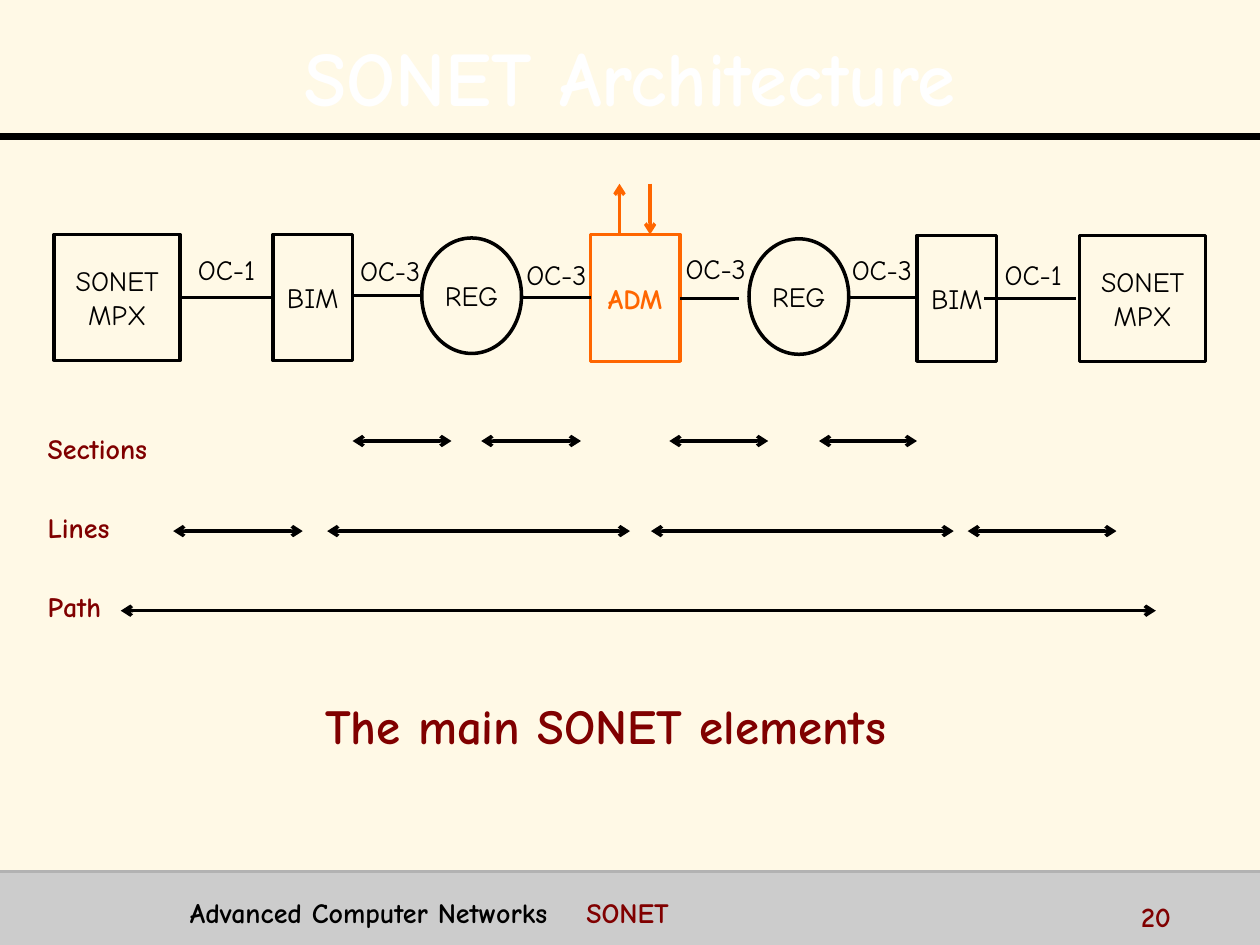
from lxml.etree import SubElement
from pptx import Presentation
from pptx.dml.color import RGBColor
from pptx.enum.shapes import MSO_CONNECTOR, MSO_SHAPE
from pptx.enum.text import MSO_ANCHOR, MSO_AUTO_SIZE, PP_ALIGN
from pptx.oxml.ns import qn
from pptx.util import Pt

FONT = "Comic Neue"
BLACK, MAROON, ORANGE, WHITE = "000000", "800000", "FF6600", "FFFFFF"


def color(value):
    return RGBColor.from_string(value)


def place(shape, left, top, width, height):
    shape.left, shape.top = Pt(left), Pt(top)
    shape.width, shape.height = Pt(width), Pt(height)


def add_run(paragraph, text, ink=BLACK, size=16, bold=False):
    run = paragraph.add_run()
    run.text = text
    font = run.font
    font.name, font.size, font.bold = FONT, Pt(size), bold
    font.color.rgb = color(ink)
    return run


def add_centered_lines(shape, lines, ink=BLACK, bold=False):
    frame = shape.text_frame
    frame.word_wrap = False
    frame.vertical_anchor = MSO_ANCHOR.MIDDLE
    for index, line in enumerate(lines):
        paragraph = frame.add_paragraph() if index else frame.paragraphs[0]
        paragraph.alignment = PP_ALIGN.CENTER
        add_run(paragraph, line, ink, bold=bold)


def add_text_box(slide, left, top, width, height):
    box = slide.shapes.add_textbox(Pt(left), Pt(top), Pt(width), Pt(height))
    box.text_frame.word_wrap = True
    return box


def add_line(slide, start, end, ink=BLACK, width=2, arrows=()):
    line = slide.shapes.add_connector(
        MSO_CONNECTOR.STRAIGHT, *(Pt(value) for value in (*start, *end)))
    line.line.color.rgb = color(ink)
    line.line.width = Pt(width)
    for tag in arrows:
        SubElement(line.line._get_or_add_ln(), qn(f"a:{tag}"), type="arrow")
    SubElement(line._element.spPr, qn("a:effectLst"))


def add_node(slide, kind, left, top, width, height, lines, ink=BLACK):
    node = slide.shapes.add_shape(kind, Pt(left), Pt(top), Pt(width), Pt(height))
    node.shadow.inherit = False
    node.fill.background()
    node.line.color.rgb = color(ink)
    node.line.width = Pt(2)
    add_centered_lines(node, lines, ink, bold=ink == ORANGE)


def add_title(slide, left, top, width, height):
    title = slide.shapes.title
    place(title, left, top, width, height)
    frame = title.text_frame
    frame.auto_size = MSO_AUTO_SIZE.NONE
    frame.vertical_anchor = MSO_ANCHOR.MIDDLE
    paragraph = frame.paragraphs[0]
    paragraph.alignment = PP_ALIGN.CENTER
    paragraph.line_spacing = 1.1
    run = add_run(paragraph, "SONET Architecture", WHITE, 44, True)
    effects = SubElement(run.font._element, qn("a:effectLst"))
    shadow = SubElement(effects, qn("a:outerShdw"), dist="25400", dir="2700000")
    SubElement(shadow, qn("a:srgbClr"), val=BLACK)
    run.font._element.find(qn("a:solidFill")).addnext(effects)
    add_line(slide, (0, 78), (720, 78), width=4)


def add_footer(slide, left, top, width, height):
    band = slide.shapes.add_shape(
        MSO_SHAPE.RECTANGLE, Pt(left), Pt(top), Pt(width), Pt(height))
    band.shadow.inherit = False
    band.fill.solid()
    band.fill.fore_color.rgb = color("CCCCCC")
    band.line.fill.background()
    add_line(slide, (left, top), (left + width, top), "B2B2B2")

    course = add_text_box(slide, left + 101.5, top + 10, 524, 22.5)
    paragraph = course.text_frame.paragraphs[0]
    tabs = SubElement(paragraph._p.get_or_add_pPr(), qn("a:tabLst"))
    SubElement(tabs, qn("a:tab"), pos=str(Pt(226.5)), algn="l")
    add_run(paragraph, "Advanced Computer Networks\t", bold=True)
    add_run(paragraph, "SONET", MAROON, bold=True)

    number = add_text_box(slide, left + 645, top + 12.5, 72, 18)
    add_run(number.text_frame.paragraphs[0], "20", MAROON, bold=True)


def add_network(slide, left, top):
    rectangle, ellipse = MSO_SHAPE.RECTANGLE, MSO_SHAPE.OVAL
    nodes = [
        (rectangle, 0, 29, 72, 72, ["SONET", "MPX"], BLACK),
        (rectangle, 125, 29, 45.5, 72, ["BIM"], BLACK),
        (ellipse, 210, 31, 57, 66, ["REG"], BLACK),
        (rectangle, 306.5, 29, 51, 72.5, ["ADM"], ORANGE),
        (ellipse, 397, 31.5, 57, 66, ["REG"], BLACK),
        (rectangle, 493, 29.5, 45.5, 72, ["BIM"], BLACK),
        (rectangle, 586, 29.5, 72, 72, ["SONET", "MPX"], BLACK),
    ]
    for kind, x, y, width, height, lines, ink in nodes:
        add_node(slide, kind, left + x, top + y, width, height, lines, ink)

    links = [
        (72, 125, 65, "OC-1", 62.5, 35),
        (170.5, 210, 64, "OC-3", 156, 35.5),
        (267, 306.5, 65, "OC-3", 251, 37.5),
        (357.5, 391.5, 65.5, "OC-3", 342, 34.5),
        (454, 493, 65, "OC-3", 437, 35),
        (531.5, 584, 65.5, "OC-1", 523.5, 37.5),
    ]
    for start, end, y, label, label_x, label_y in links:
        add_line(slide, (left + start, top + y), (left + end, top + y))
        box = add_text_box(slide, left + label_x, top + label_y, 72, 28)
        add_centered_lines(box, [label])

    for x, start, end in [(323, 29, 0), (340.5, 0, 29)]:
        add_line(slide, (left + x, top + start), (left + x, top + end),
                 ORANGE, arrows=["tailEnd"])


def add_spans(slide, left, top):
    body = slide.placeholders[1]
    place(body, left, top, 80, 130)
    frame = body.text_frame
    frame.auto_size = MSO_AUTO_SIZE.NONE
    for index, name in enumerate(["Sections", "Lines", "Path"]):
        paragraph = frame.add_paragraph() if index else frame.paragraphs[0]
        properties = paragraph._p.get_or_add_pPr()
        properties.set("marL", "0")
        properties.set("indent", "0")
        SubElement(properties, qn("a:buNone"))
        paragraph.space_before = Pt(26 if index else 0)
        add_run(paragraph, name, MAROON, bold=True)

    rows = [
        (9, [(181.5, 238), (255, 312), (362.5, 419), (448, 504)]),
        (60.5, [(79, 153), (167, 340), (352, 525), (533, 618)]),
        (106, [(49, 640.5)]),
    ]
    for y, spans in rows:
        for start, end in spans:
            add_line(slide, (left + start, top + y), (left + end, top + y),
                     arrows=["headEnd", "tailEnd"])


def add_caption(slide, left, top, width, height):
    caption = add_text_box(slide, left, top, width, height)
    paragraph = caption.text_frame.paragraphs[0]
    paragraph.alignment = PP_ALIGN.CENTER
    add_run(paragraph, "The main SONET elements", MAROON, 28, True)


def main():
    presentation = Presentation()
    presentation.slide_width, presentation.slide_height = Pt(720), Pt(540)
    slide = presentation.slides.add_slide(presentation.slide_layouts[1])
    slide.background.fill.solid()
    slide.background.fill.fore_color.rgb = color("FFF9E6")
    add_title(slide, 14, 9.5, 692, 62.5)
    add_network(slide, 31, 105)
    add_spans(slide, 20, 243)
    add_caption(slide, 139, 394, 414, 41)
    add_footer(slide, 0, 498, 720, 42)
    presentation.save("out.pptx")


if __name__ == "__main__":
    main()
